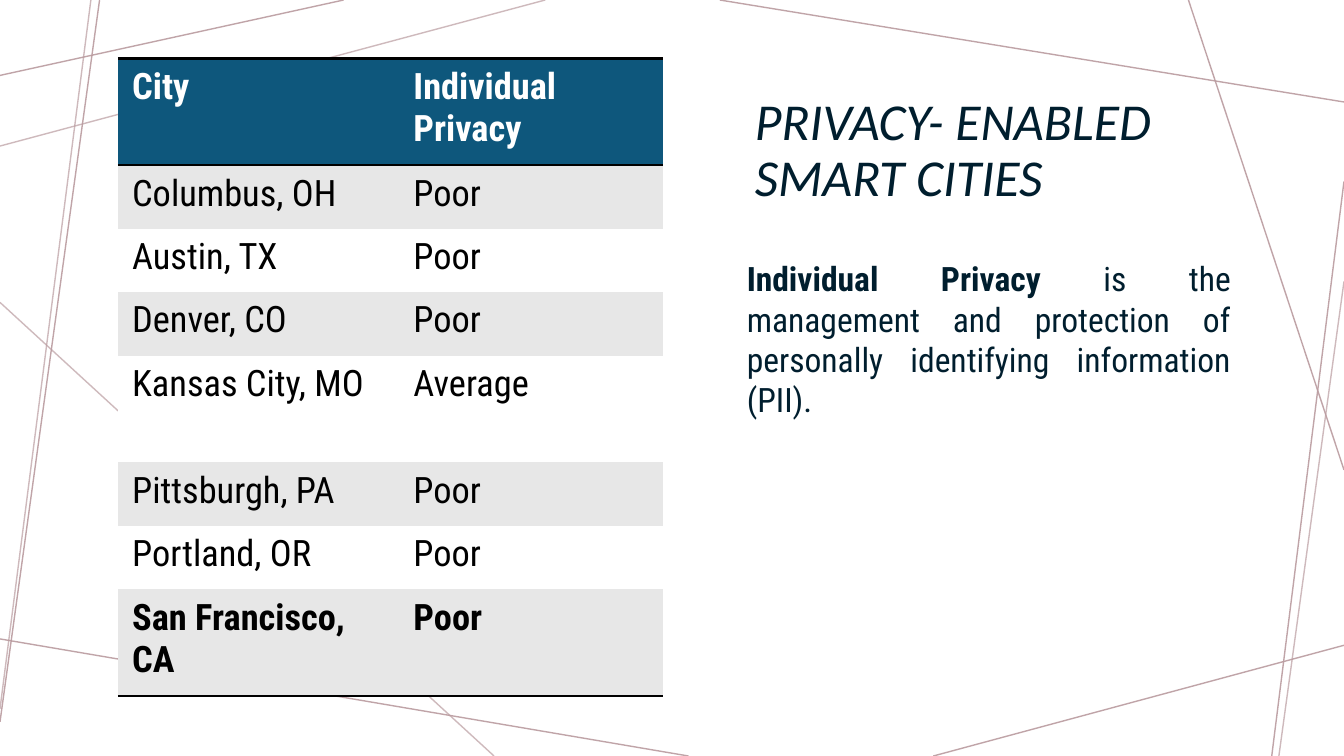
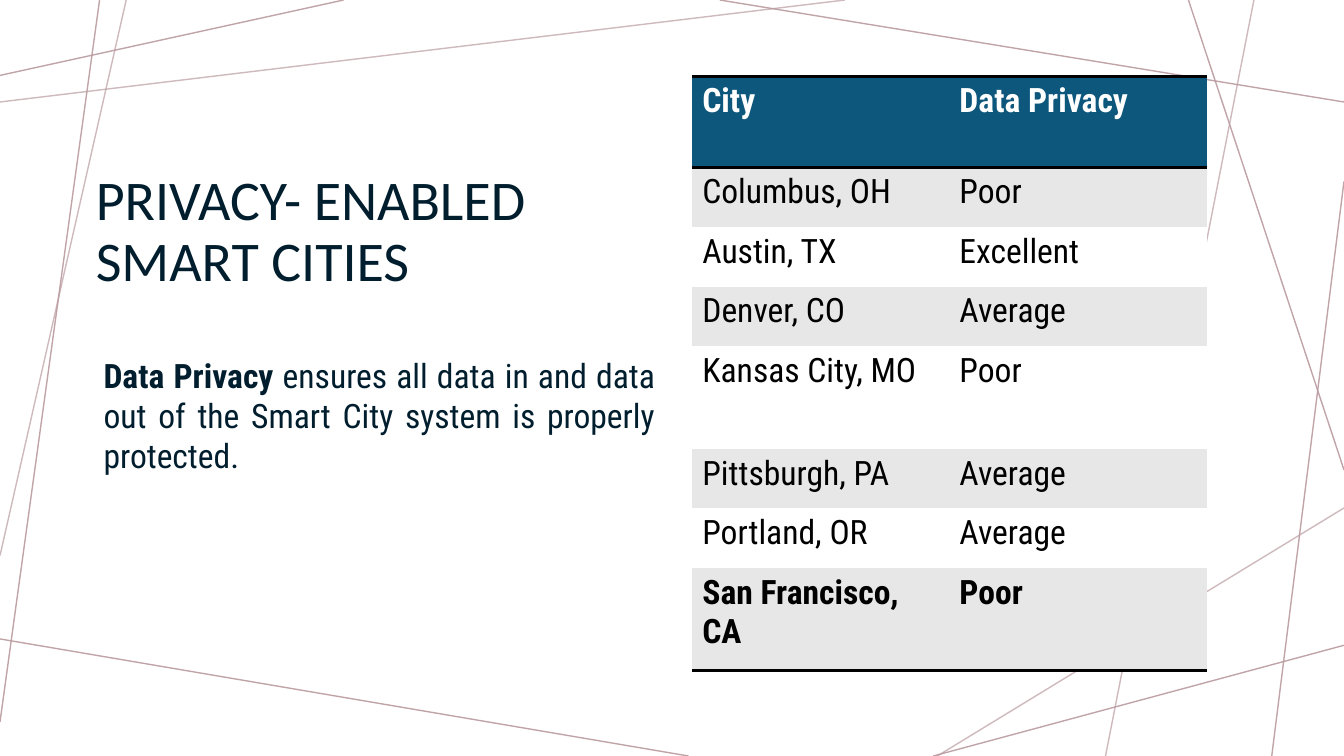
from dataclasses import dataclass

from lxml.etree import SubElement
from pptx import Presentation
from pptx.dml.color import RGBColor
from pptx.enum.shapes import MSO_CONNECTOR
from pptx.enum.text import MSO_ANCHOR, MSO_AUTO_SIZE, PP_ALIGN
from pptx.oxml.ns import qn
from pptx.util import Cm, Pt


@dataclass(frozen=True)
class Theme:
    ink: str = "001E2E"
    header: str = "0E577C"
    band: str = "E7E7E7"
    white: str = "FFFFFF"
    black: str = "000000"
    strand: str = "BA9CA0"
    title_font: str = "Calibri"
    body_font: str = "Roboto Condensed"
    body_size: int = 24
    strand_width: int = 1
    rule_width: int = 2


THEME = Theme()
WIDTH, HEIGHT = 33.87, 19.05
TITLE_ONLY = 5

TITLE = "PRIVACY- ENABLED SMART CITIES"
CITIES = ["Columbus, OH", "Austin, TX", "Denver, CO", "Kansas City, MO",
          "Pittsburgh, PA", "Portland, OR", "San Francisco, CA"]
TALL_CITIES = {"Kansas City, MO", "San Francisco, CA"}

# Lengths are centimetres; a strand is (x1, y1, x2, y2), a box (left, top, width, height).
SHARED_STRANDS = [
    (8.66, 0, 0, 1.9), (2.51, 0, 0, 18.19), (17.35, HEIGHT, 0, 16.1),
    (WIDTH, 16.26, 23.52, HEIGHT), (WIDTH, 4.57, 32.05, HEIGHT),
    (WIDTH, 11.84, 29.95, 0), (WIDTH, 2.57, 18.14, 0),
]
SHARED_OPACITY, EXTRA_OPACITY = 91, 70

PAGES = [
    {
        "strands": [(13.74, 0, 0, 3.68), (2.29, 0, 0, 17.86),
                    (12.45, HEIGHT, 0, 7.62), (WIDTH, 7.09, 32.23, HEIGHT)],
        "title": {"box": (18.77, 1.47, 12.5, 4.7), "size": 37,
                  "italic": True, "anchor": MSO_ANCHOR.MIDDLE},
        "term": "Individual Privacy",
        "meaning": " is the management and protection of personally "
                   "identifying information (PII).",
        "body_box": (18.57, 6.38, 12.7, 11.2),
        "grades": ["Poor", "Poor", "Poor", "Average", "Poor", "Poor", "Poor"],
        "table": {"corner": (2.97, 1.47), "columns": (7.09, 6.65),
                  "header": 2.69, "row": 1.6, "tall": 2.69,
                  "size": 26, "margins": (0.36, 0.18)},
    },
    {
        "strands": [(21.29, 0, 0, 2.57), (3.18, 0, 0, 14),
                    (WIDTH, 12.8, 23.62, HEIGHT), (31.6, 0, 27.86, HEIGHT)],
        "title": {"box": (2.16, 2.39, 15.19, 5.13), "size": 40,
                  "italic": False, "anchor": MSO_ANCHOR.BOTTOM},
        "term": "Data Privacy",
        "meaning": " ensures all data in and data out of the Smart City "
                   "system is properly protected.",
        "body_box": (2.36, 8.81, 14.4, 10),
        "grades": ["Poor", "Excellent", "Average", "Poor", "Average", "Average", "Poor"],
        "table": {"corner": (17.45, 1.93), "columns": (6.48, 6.48),
                  "header": 2.29, "row": 1.5, "tall": 2.59,
                  "size": 24, "margins": (0.25, 0.13)},
    },
]


def style(span, font, size, color, bold=False, italic=False):
    span.font.name = font
    span.font.size = Pt(size)
    span.font.color.rgb = RGBColor.from_string(color)
    span.font.bold = bold
    span.font.italic = italic


def add_strands(page, strands, opacity):
    for ends in strands:
        strand = page.shapes.add_connector(MSO_CONNECTOR.STRAIGHT, *map(Cm, ends))
        strand.line.width = Pt(THEME.strand_width)
        strand.line.color.rgb = RGBColor.from_string(THEME.strand)
        properties = strand._element.spPr
        color = next(properties.iter(qn("a:srgbClr")))
        SubElement(color, qn("a:alpha"), val=str(opacity * 1000))
        SubElement(properties, qn("a:effectLst"))


def set_title(page, look):
    title = page.shapes.title
    title.left, title.top, title.width, title.height = map(Cm, look["box"])
    frame = title.text_frame
    frame.text = TITLE
    frame.word_wrap = True
    frame.auto_size = MSO_AUTO_SIZE.NONE
    frame.vertical_anchor = look["anchor"]
    para = frame.paragraphs[0]
    para.alignment = PP_ALIGN.LEFT
    para.line_spacing = 0.9
    style(para.runs[0], THEME.title_font, look["size"], THEME.ink, italic=look["italic"])


def add_definition(page, term, meaning, place):
    frame = page.shapes.add_textbox(*map(Cm, place)).text_frame
    frame.word_wrap = True
    para = frame.paragraphs[0]
    para.alignment = PP_ALIGN.JUSTIFY
    for text, bold in ((term, True), (meaning, False)):
        span = para.add_run()
        span.text = text
        style(span, THEME.body_font, THEME.body_size, THEME.ink, bold)


def rule_cell(cell, ruled_sides):
    """Draw the named sides (T, B) and clear the others; call before filling."""
    properties = cell._tc.get_or_add_tcPr()
    for side in "LRTB":
        if side in ruled_sides:
            edge = SubElement(properties, qn(f"a:ln{side}"), w=str(Pt(THEME.rule_width)))
            fill = SubElement(edge, qn("a:solidFill"))
            SubElement(fill, qn("a:srgbClr"), val=THEME.black)
        else:
            edge = SubElement(properties, qn(f"a:ln{side}"), w="0")
            SubElement(edge, qn("a:noFill"))


def add_city_table(page, heading, grades, look):
    rows = [("City", heading), *zip(CITIES, grades)]
    heights = [look["header"]] + [
        look["tall" if city in TALL_CITIES else "row"] for city in CITIES]
    last = len(rows) - 1
    size = (sum(look["columns"]), sum(heights))
    table = page.shapes.add_table(
        len(rows), len(look["columns"]), *map(Cm, look["corner"] + size)).table
    table.horz_banding = False
    for column, width in zip(table.columns, look["columns"]):
        column.width = Cm(width)

    side_margin, end_margin = map(Cm, look["margins"])
    for r, (texts, height) in enumerate(zip(rows, heights)):
        table.rows[r].height = Cm(height)
        ruled = {0: "TB", 1: "T", last: "B"}.get(r, "")
        fill = THEME.header if r == 0 else THEME.band if r % 2 else THEME.white
        color = THEME.white if r == 0 else THEME.black
        for c, text in enumerate(texts):
            cell = table.cell(r, c)
            rule_cell(cell, ruled)
            cell.fill.solid()
            cell.fill.fore_color.rgb = RGBColor.from_string(fill)
            cell.margin_left = cell.margin_right = side_margin
            cell.margin_top = cell.margin_bottom = end_margin
            cell.text_frame.text = text
            style(cell.text_frame.paragraphs[0].runs[0], THEME.body_font,
                  look["size"], color, bold=r in (0, last))


def main():
    deck = Presentation()
    deck.slide_width, deck.slide_height = Cm(WIDTH), Cm(HEIGHT)
    for content in PAGES:
        page = deck.slides.add_slide(deck.slide_layouts[TITLE_ONLY])
        add_strands(page, SHARED_STRANDS, SHARED_OPACITY)
        add_strands(page, content["strands"], EXTRA_OPACITY)
        set_title(page, content["title"])
        add_definition(page, content["term"], content["meaning"], content["body_box"])
        add_city_table(page, content["term"], content["grades"], content["table"])
    deck.save("out.pptx")


if __name__ == "__main__":
    main()
